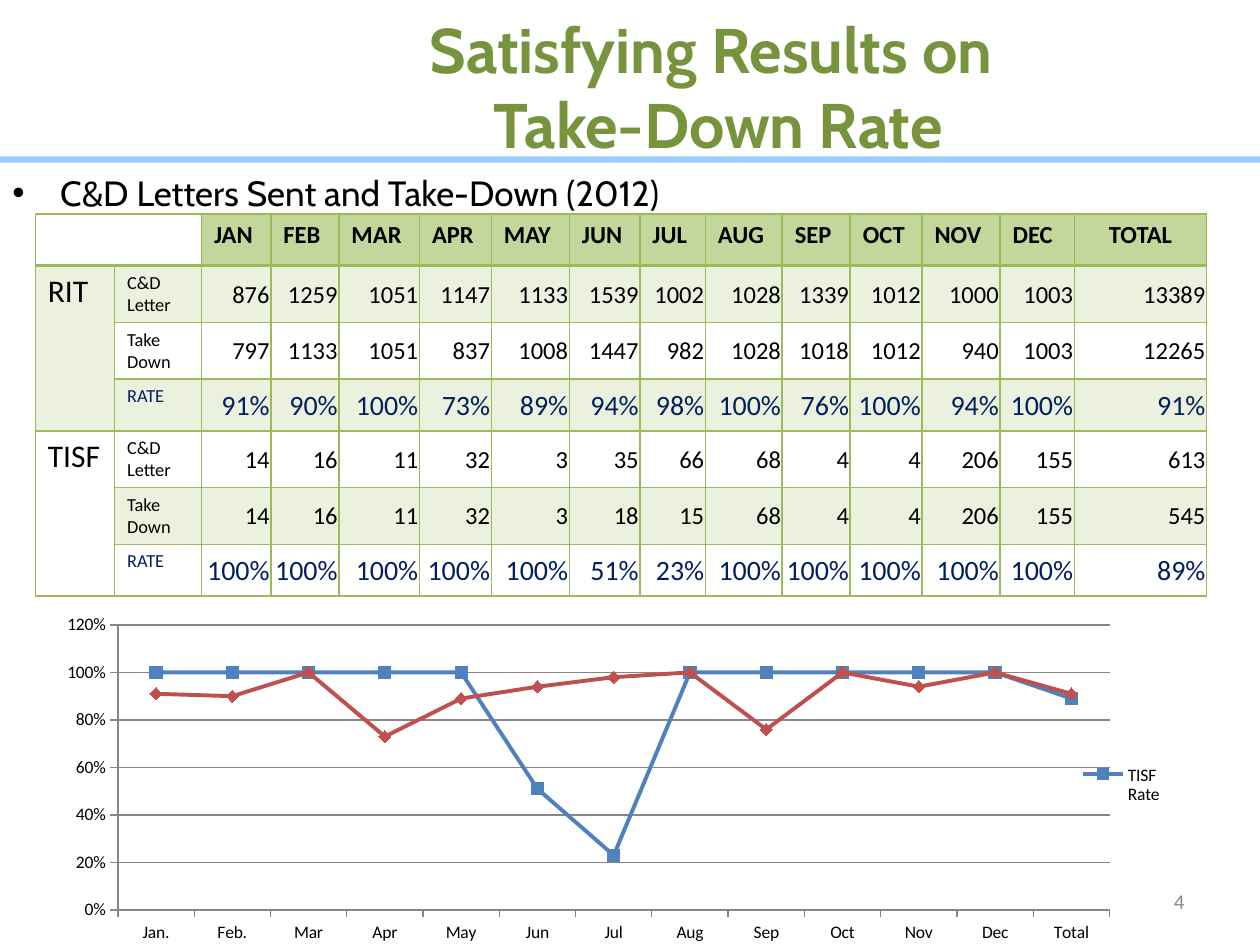
import pptx
import pptx.util
import pptx.chart.data
import pptx.dml.color
import pptx.enum.chart
import pptx.enum.shapes
import pptx.enum.text
import pptx.oxml
import pptx.oxml.ns
from lxml import etree

Inches, Pt = pptx.util.Inches, pptx.util.Pt
ALIGN, ANCHOR = pptx.enum.text.PP_ALIGN, pptx.enum.text.MSO_ANCHOR

# Content
TITLE = "Satisfying Results on \vTake-Down Rate"
SUBTITLE = "C&D Letters Sent and Take-Down (2012)"
PAGE = "4"
HEADERS = "JAN FEB MAR APR MAY JUN JUL AUG SEP OCT NOV DEC TOTAL".split()
MEASURES = ["C&D Letter", "Take Down", "RATE"]
RESULTS = {
    "RIT": [
        [876, 1259, 1051, 1147, 1133, 1539, 1002, 1028, 1339, 1012, 1000, 1003, 13389],
        [797, 1133, 1051, 837, 1008, 1447, 982, 1028, 1018, 1012, 940, 1003, 12265],
        [91, 90, 100, 73, 89, 94, 98, 100, 76, 100, 94, 100, 91],
    ],
    "TISF": [
        [14, 16, 11, 32, 3, 35, 66, 68, 4, 4, 206, 155, 613],
        [14, 16, 11, 32, 3, 18, 15, 68, 4, 4, 206, 155, 545],
        [100, 100, 100, 100, 100, 51, 23, 100, 100, 100, 100, 100, 89],
    ],
}
PERIODS = ["Jan.", "Feb.", "Mar", "Apr", "May", "Jun", "Jul", "Aug", "Sep",
           "Oct", "Nov", "Dec", "Total"]
MARKERS = pptx.enum.chart.XL_MARKER_STYLE
RATE_LINES = [("TISF", "tisf", MARKERS.SQUARE), ("RIT", "rit", MARKERS.DIAMOND)]

COLORS = {"title": "77933C", "rule": "99CCFF", "text": "000000", "rate": "002060",
          "header": "C3D69B", "band": "EBF1DE", "border": "9BBB59", "grid": "868686",
          "page": "8C8C8C", "tisf": "4F81BD", "rit": "C0504D"}

# Grid of the table, in inches
COLUMNS = [0.63, 0.69, 0.55, 0.54, 0.64, 0.57, 0.62, 0.56, 0.52, 0.61, 0.54, 0.57,
           0.62, 0.59, 1.05]
HEADER_HEIGHT = 0.41
MEASURE_HEIGHTS = [0.45, 0.45, 0.41]
ROWS = [HEADER_HEIGHT] + MEASURE_HEIGHTS * len(RESULTS)
LEFT, TABLE_TOP = 0.28, 1.7


def rgb(name):
    return pptx.dml.color.RGBColor.from_string(COLORS[name])


def style(frame, size, color="text", font="Calibri", bold=False, align=ALIGN.LEFT):
    for paragraph in frame.paragraphs:
        paragraph.alignment = align
        for run in paragraph.runs:
            run.font.size, run.font.name, run.font.bold = Pt(size), font, bold
            run.font.color.rgb = rgb(color)


def add_text(slide, text, box, anchor, **look):
    frame = slide.shapes.add_textbox(*map(Inches, box)).text_frame
    frame.word_wrap, frame.vertical_anchor = True, anchor
    frame.text = text
    style(frame, **look)
    return frame


def add_borders(cell, top, bottom):
    properties = cell._tc.get_or_add_tcPr()
    widths = {"lnL": 1, "lnR": 1, "lnT": top, "lnB": bottom}
    for place, (side, width) in enumerate(widths.items()):
        properties.insert(place, pptx.oxml.parse_xml(
            f'<a:{side} {pptx.oxml.ns.nsdecls("a")} w="{Pt(width)}"><a:solidFill>'
            f'<a:srgbClr val="{COLORS["border"]}"/></a:solidFill></a:{side}>'))


def fill_cell(cell, text, size, fill=None, number=False, **look):
    if fill:
        cell.fill.solid()
        cell.fill.fore_color.rgb = rgb(fill)
    if number:
        cell.margin_left = cell.margin_top = cell.margin_right = Inches(0.01)
        cell.margin_bottom = 0
        cell.vertical_anchor = ANCHOR.MIDDLE
        look["align"] = ALIGN.RIGHT
    cell.text = text
    style(cell.text_frame, size, **look)


def add_results(slide):
    table = slide.shapes.add_table(
        len(ROWS), len(COLUMNS), Inches(LEFT), Inches(TABLE_TOP),
        Inches(sum(COLUMNS)), Inches(sum(ROWS))).table
    table.horz_banding = table.first_row = False
    for column, width in zip(table.columns, COLUMNS):
        column.width = Inches(width)
    for row, height in zip(table.rows, ROWS):
        row.height = Inches(height)
    for r in range(len(ROWS)):
        for c in range(len(COLUMNS)):
            cell = table.cell(r, c)
            cell.fill.background()
            add_borders(cell, top=2 if r == 1 else 1, bottom=2 if r == 0 else 1)

    # Header row
    table.cell(0, 0).merge(table.cell(0, 1))
    for c, header in enumerate(HEADERS, 2):
        fill_cell(table.cell(0, c), header, 14, "header", bold=True,
                  align=ALIGN.CENTER if header == "TOTAL" else ALIGN.LEFT)

    # One block of measures per group, odd rows banded
    for g, (group, measures) in enumerate(RESULTS.items()):
        first = 1 + g * len(MEASURES)
        table.cell(first, 0).merge(table.cell(first + len(MEASURES) - 1, 0))
        fill_cell(table.cell(first, 0), group, 18, "band" if first % 2 else None)
        for r, (measure, values) in enumerate(zip(MEASURES, measures), first):
            is_rate = measure == "RATE"
            band = "band" if r % 2 else None
            color = "rate" if is_rate else "text"
            fill_cell(table.cell(r, 1), measure, 10.5, band, color=color)
            for c, value in enumerate(values, 2):
                fill_cell(table.cell(r, c), f"{value}%" if is_rate else str(value),
                          16 if is_rate else 14, band, number=True, color=color)


def set_layout(owner, after, x, y, w, h, inner=False):
    target = '<c:layoutTarget val="inner"/>' if inner else ""
    modes = "".join(f'<c:{m}Mode val="edge"/>' for m in "xy")
    sizes = "".join(f'<c:{k} val="{v}"/>' for k, v in zip("xywh", (x, y, w, h)))
    for old in owner.findall(pptx.oxml.ns.qn("c:layout")):
        owner.remove(old)
    layout = pptx.oxml.parse_xml(
        f'<c:layout {pptx.oxml.ns.nsdecls("c")}><c:manualLayout>{target}{modes}{sizes}'
        '</c:manualLayout></c:layout>')
    if after is None:
        owner.insert(0, layout)
    else:
        after.addnext(layout)


def add_rates(slide):
    data = pptx.chart.data.CategoryChartData(number_format="0%")
    data.categories = PERIODS
    for group, _, _ in RATE_LINES:
        data.add_series(f"{group} Rate", [rate / 100 for rate in RESULTS[group][-1]])
    chart = slide.shapes.add_chart(
        pptx.enum.chart.XL_CHART_TYPE.LINE_MARKERS, Inches(LEFT), Inches(4.85),
        Inches(9.37), Inches(2.76), data).chart
    chart.has_title = False
    chart.font.size, chart.font.name = Pt(10), "Calibri"
    chart.font.color.rgb = rgb("text")
    plot = chart.plots[0]
    plot.vary_by_categories = False
    for line, (_, color, marker) in zip(plot.series, RATE_LINES):
        line.smooth = False
        line.format.line.width = Pt(2.25)
        line.format.line.color.rgb = rgb(color)
        line.marker.style, line.marker.size = marker, 7
        line.marker.format.fill.solid()
        line.marker.format.fill.fore_color.rgb = rgb(color)
        line.marker.format.line.color.rgb = rgb(color)

    # Axes
    rates = chart.value_axis
    rates.minimum_scale, rates.maximum_scale, rates.major_unit = 0, 1.2, 0.2
    rates.tick_labels.number_format = "0%"
    rates.tick_labels.number_format_is_linked = False
    rates.has_major_gridlines = True
    for ruled in (rates, chart.category_axis, rates.major_gridlines):
        ruled.format.line.color.rgb = rgb("grid")
        ruled.format.line.width = Pt(0.75)
    for axis in (rates, chart.category_axis):
        axis.major_tick_mark = pptx.enum.chart.XL_TICK_MARK.OUTSIDE

    # Legend shows the first line only
    chart.has_legend = True
    chart.legend.position = pptx.enum.chart.XL_LEGEND_POSITION.RIGHT
    chart.legend.include_in_layout = False
    key = chart.legend._element
    hidden = pptx.oxml.parse_xml(
        f'<c:legendEntry {pptx.oxml.ns.nsdecls("c")}><c:idx val="1"/>'
        '<c:delete val="1"/></c:legendEntry>')
    key.find(pptx.oxml.ns.qn("c:legendPos")).addnext(hidden)
    set_layout(key, hidden, 0.88, 0.43, 0.08, 0.14)
    set_layout(chart._chartSpace.chart.plotArea, None, 0.07, 0.04, 0.84, 0.82, inner=True)


def main():
    deck = pptx.Presentation()
    deck.slide_width, deck.slide_height = Inches(10), Inches(7.5)
    slide = deck.slides.add_slide(deck.slide_layouts[6])

    # Heading
    rule = slide.shapes.add_shape(pptx.enum.shapes.MSO_SHAPE.RECTANGLE,
                                  *map(Inches, (-0.04, 1.24, 10.06, 0.05)))
    rule.shadow.inherit = False
    rule.fill.solid()
    rule.fill.fore_color.rgb = rgb("rule")
    rule.line.fill.background()
    add_text(slide, TITLE, (1.41, 0.21, 8.58, 1.12), ANCHOR.BOTTOM, size=36,
             color="title", font="Cabin", bold=True, align=ALIGN.CENTER)
    subtitle = add_text(slide, SUBTITLE, (0, 1.31, 10, 6.19), ANCHOR.TOP, size=20,
                        font="Cabin")
    bulleted = subtitle.paragraphs[0]._p.get_or_add_pPr()
    bulleted.set("marL", str(Inches(0.38)))
    bulleted.set("indent", str(Inches(-0.38)))
    etree.SubElement(bulleted, pptx.oxml.ns.qn("a:buFont"), typeface="Arial")
    etree.SubElement(bulleted, pptx.oxml.ns.qn("a:buChar"), char="•")

    add_results(slide)
    add_rates(slide)
    add_text(slide, PAGE, (7.17, 6.95, 2.33, 0.4), ANCHOR.MIDDLE, size=12,
             color="page", align=ALIGN.RIGHT)
    deck.save("out.pptx")


if __name__ == "__main__":
    main()
